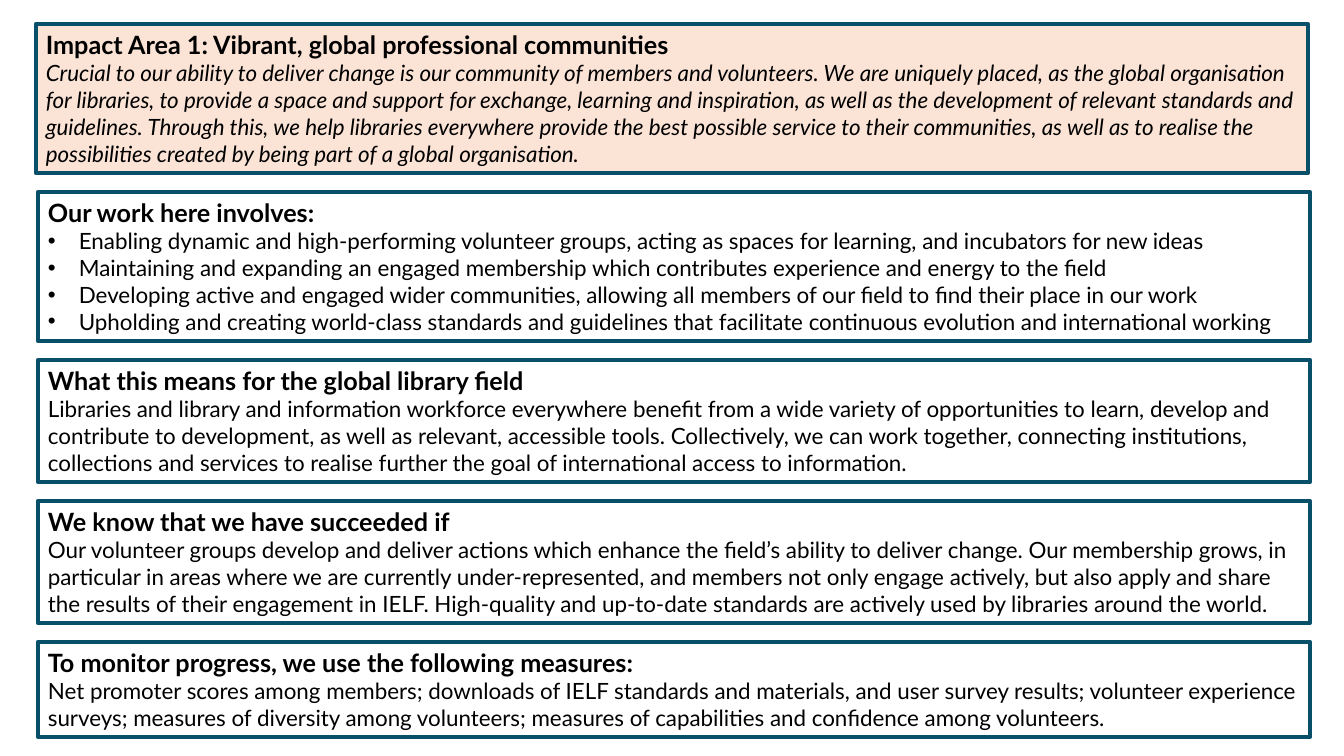
from lxml import etree
from pptx import Presentation
from pptx.dml.color import RGBColor
from pptx.enum.shapes import MSO_SHAPE
from pptx.enum.text import MSO_ANCHOR, MSO_AUTO_SIZE, PP_ALIGN
from pptx.oxml.ns import qn
from pptx.util import Pt

PX = 914400 / 100.8  # EMU per pixel
COLORS = {"peach": "FBE3D6", "white": "FFFFFF", "teal": "084F6A", "text": "000000"}


def px(n):
    return round(n * PX)


def add_text(p, text, size=16, bold=False, italic=False, bullet=False):
    p.alignment = PP_ALIGN.LEFT
    r = p.add_run()
    r.text = text
    r.font.name = "Lato"
    r.font.size = Pt(size)
    r.font.bold = bold
    r.font.italic = italic
    r.font.color.rgb = RGBColor.from_string(COLORS["text"])
    if bullet:
        pPr = p._p.get_or_add_pPr()
        pPr.set("marL", str(px(31)))
        pPr.set("indent", str(-px(31)))
        etree.SubElement(pPr, qn("a:buFont")).set("typeface", "Arial")
        etree.SubElement(pPr, qn("a:buChar")).set("char", "•")


# Panels from top to bottom: left, height, fill, heading, body format, paragraphs
panels = [
    (36, 149, "peach", "Impact Area 1: Vibrant, global professional communities", {"italic": True}, [
        "Crucial to our ability to deliver change is our community of members and volunteers. "
        "We are uniquely placed, as the global organisation for libraries, to provide a space and "
        "support for exchange, learning and inspiration, as well as the development of relevant "
        "standards and guidelines. Through this, we help libraries everywhere provide the best "
        "possible service to their communities, as well as to realise the possibilities created "
        "by being part of a global organisation."]),
    (38, 149, "white", "Our work here involves:", {"bullet": True}, [
        "Enabling dynamic and high-performing volunteer groups, acting as spaces for learning, "
        "and incubators for new ideas",
        "Maintaining and expanding an engaged membership which contributes experience and energy "
        "to the field",
        "Developing active and engaged wider communities, allowing all members of our field to "
        "find their place in our work",
        "Upholding and creating world-class standards and guidelines that facilitate continuous "
        "evolution and international working"]),
    (38, 122, "white", "What this means for the global library field", {}, [
        "Libraries and library and information workforce everywhere benefit from a wide variety "
        "of opportunities to learn, develop and contribute to development, as well as relevant, "
        "accessible tools. Collectively, we can work together, connecting institutions, "
        "collections and services to realise further the goal of international access to "
        "information."]),
    (38, 122, "white", "We know that we have succeeded if", {}, [
        "Our volunteer groups develop and deliver actions which enhance the field’s ability to "
        "deliver change. Our membership grows, in particular in areas where we are currently "
        "under-represented, and members not only engage actively, but also apply and share the "
        "results of their engagement in IELF. High-quality and up-to-date standards are actively "
        "used by libraries around the world."]),
    (38, 95, "white", "To monitor progress, we use the following measures:", {}, [
        "Net promoter scores among members; downloads of IELF standards and materials, and user "
        "survey results; volunteer experience surveys; measures of diversity among volunteers; "
        "measures of capabilities and confidence among volunteers."]),
]

prs = Presentation()
prs.slide_width, prs.slide_height = px(1344), px(756)
s = prs.slides.add_slide(prs.slide_layouts[6])

# Stack the panels with equal gaps
TOP, WIDTH, GAP = 24, 1272, 19
top = TOP
for left, height, fill, heading, body_format, paragraphs in panels:
    sp = s.shapes.add_shape(MSO_SHAPE.RECTANGLE, px(left), px(top), px(WIDTH), px(height))
    sp.shadow.inherit = False
    sp.fill.solid()
    sp.fill.fore_color.rgb = RGBColor.from_string(COLORS[fill])
    sp.line.color.rgb = RGBColor.from_string(COLORS["teal"])
    sp.line.width = Pt(3)

    tf = sp.text_frame
    tf.word_wrap = True
    tf.auto_size = MSO_AUTO_SIZE.SHAPE_TO_FIT_TEXT
    tf.vertical_anchor = MSO_ANCHOR.TOP
    add_text(tf.paragraphs[0], heading, size=18, bold=True)
    for text in paragraphs:
        add_text(tf.add_paragraph(), text, **body_format)
    top += height + GAP

prs.save("out.pptx")
